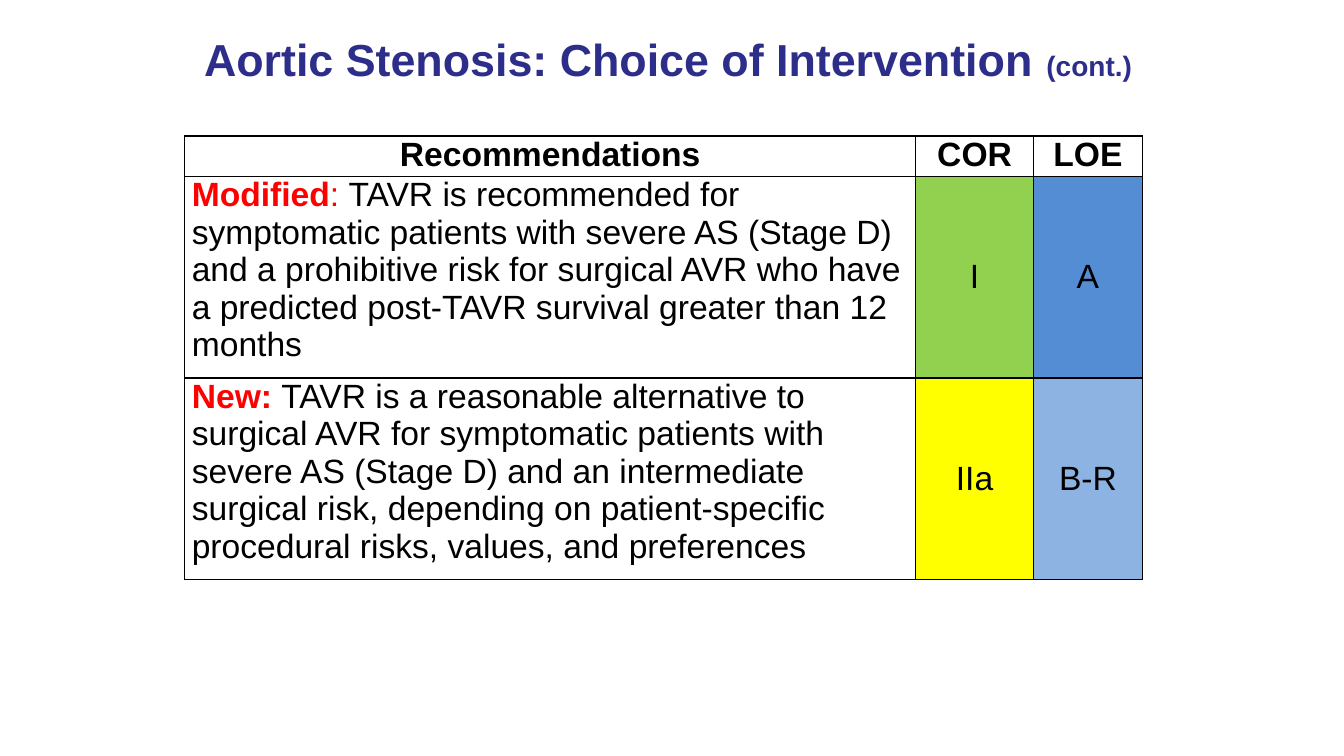
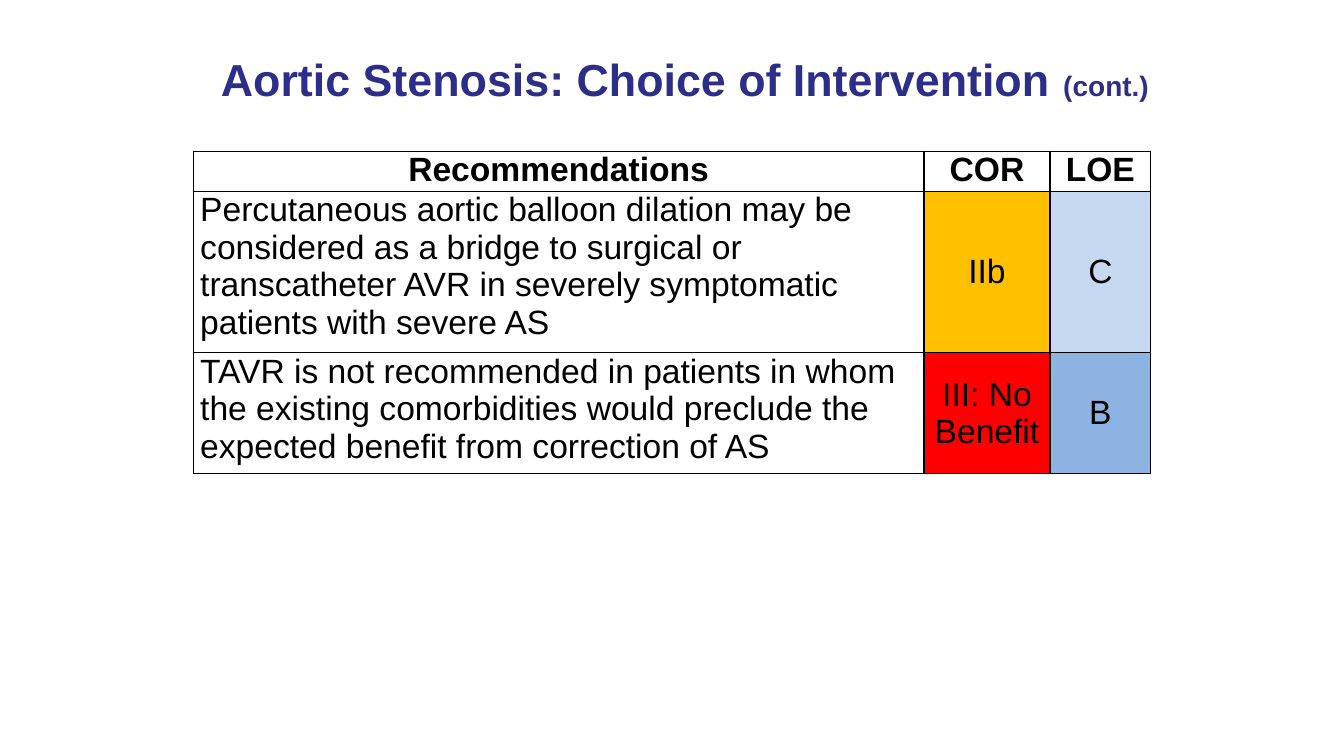
"""Build two slides of treatment recommendations for aortic stenosis."""
from lxml import etree
from pptx import Presentation
from pptx.dml.color import RGBColor
from pptx.enum.text import MSO_ANCHOR, PP_ALIGN
from pptx.oxml.ns import qn
from pptx.util import Pt

LEFT, CENTER = PP_ALIGN.LEFT, PP_ALIGN.CENTER
TOP, MIDDLE = MSO_ANCHOR.TOP, MSO_ANCHOR.MIDDLE
TITLE_ONLY = 5
FONT = "Arial"

NAVY = RGBColor(0x2D, 0x2D, 0x8A)
BLACK = RGBColor(0, 0, 0)
RED = RGBColor(0xFF, 0, 0)
GREEN = RGBColor(0x92, 0xD0, 0x50)
YELLOW = RGBColor(0xFF, 0xFF, 0)
AMBER = RGBColor(0xFF, 0xC0, 0)
BLUE = RGBColor(0x54, 0x8D, 0xD4)
SKY = RGBColor(0x8D, 0xB3, 0xE2)
PALE = RGBColor(0xC6, 0xD9, 0xF1)

HEADS = ("Recommendations", "COR", "LOE")
HEAD_H = 28.8
FIRST_W = 522


def add_run(para, text, size=24, color=BLACK, bold=False):
    """Add one formatted run to a paragraph."""
    run = para.add_run()
    run.text = text
    font = run.font
    font.name, font.size, font.bold = FONT, Pt(size), bold
    font.color.rgb = color


def add_title(slide, left, top, width, height):
    """Place the title and fill in its shared wording."""
    title = slide.shapes.title
    title.left, title.top = Pt(left), Pt(top)
    title.width, title.height = Pt(width), Pt(height)
    frame = title.text_frame
    frame.word_wrap = True
    frame.vertical_anchor = MIDDLE
    para = frame.paragraphs[0]
    para.alignment = CENTER
    add_run(para, "Aortic Stenosis: Choice of Intervention ",
            size=32, color=NAVY, bold=True)
    add_run(para, "(cont.) ", size=20, color=NAVY, bold=True)


def add_edges(cell):
    """Draw a thin black line on all four sides of a cell."""
    props = cell._tc.get_or_add_tcPr()
    for side in ("a:lnL", "a:lnR", "a:lnT", "a:lnB"):
        line = etree.SubElement(props, qn(side), w=str(Pt(1)))
        fill = etree.SubElement(line, qn("a:solidFill"))
        etree.SubElement(fill, qn("a:srgbClr"), val=str(BLACK))


def fill_cell(cell, runs, fill=None, align=CENTER, anchor=MIDDLE):
    """Format a cell and write its runs of text and format."""
    add_edges(cell)
    if fill is None:
        cell.fill.background()
    else:
        cell.fill.solid()
        cell.fill.fore_color.rgb = fill
    cell.margin_left = cell.margin_right = Pt(5.04)
    cell.margin_top = cell.margin_bottom = 0
    cell.vertical_anchor = anchor
    para = cell.text_frame.paragraphs[0]
    para.alignment = align
    for text, style in runs:
        add_run(para, text, **style)


def add_grid(slide, left, top, widths, rows):
    """Add a table of advice, class and level, one row for each item."""
    widths = (FIRST_W, *widths)
    heights = [HEAD_H] + [row[0] for row in rows]
    frame = slide.shapes.add_table(
        len(heights), len(widths), Pt(left), Pt(top),
        Pt(sum(widths)), Pt(sum(heights)))
    table = frame.table
    table.horz_banding = False
    for col, width in zip(table.columns, widths):
        col.width = Pt(width)
    for row, height in zip(table.rows, heights):
        row.height = Pt(height)
    for col, head in enumerate(HEADS):
        fill_cell(table.cell(0, col), [(head, {"bold": True})], anchor=TOP)
    for num, (_, runs, *marks) in enumerate(rows, 1):
        fill_cell(table.cell(num, 0), runs, align=LEFT, anchor=TOP)
        for col, (text, fill) in enumerate(marks, 1):
            fill_cell(table.cell(num, col), [(text, {})], fill=fill)


def main():
    """Build and save both slides."""
    deck = Presentation()
    deck.slide_width, deck.slide_height = Pt(960), Pt(540)
    layout = deck.slide_layouts[TITLE_ONLY]
    flag = {"color": RED, "bold": True}

    slide = deck.slides.add_slide(layout)
    add_title(slide, 120, 6, 720, 72)
    add_grid(slide, 132, 97.2, (84.24, 77.76), [
        (144, [("Modified", flag), (": ", {"color": RED}),
               ("TAVR is recommended for symptomatic patients with severe "
                "AS (Stage D) and a prohibitive risk for surgical AVR who "
                "have a predicted post-TAVR survival greater than 12 months",
                {})],
         ("I", GREEN), ("A", BLUE)),
        (144, [("New: ", flag),
               ("TAVR is a reasonable alternative to surgical AVR for "
                "symptomatic patients with severe AS (Stage D) and an "
                "intermediate surgical risk, depending on patient-specific "
                "procedural risks, values, and preferences", {})],
         ("IIa", YELLOW), ("B-R", SKY)),
    ])

    slide = deck.slides.add_slide(layout)
    add_title(slide, 144, 21.6, 696, 68.4)
    add_grid(slide, 138, 108, (90, 72), [
        (115.2, [("Percutaneous aortic balloon dilation may be considered "
                  "as a bridge to surgical or transcatheter AVR in severely "
                  "symptomatic patients with severe AS", {})],
         ("IIb", AMBER), ("C", PALE)),
        (86.4, [("TAVR is not recommended in patients in whom the existing "
                 "comorbidities would preclude the expected benefit from "
                 "correction of AS", {})],
         ("III: No Benefit", RED), ("B", SKY)),
    ])
    deck.save("out.pptx")


if __name__ == "__main__":
    main()
